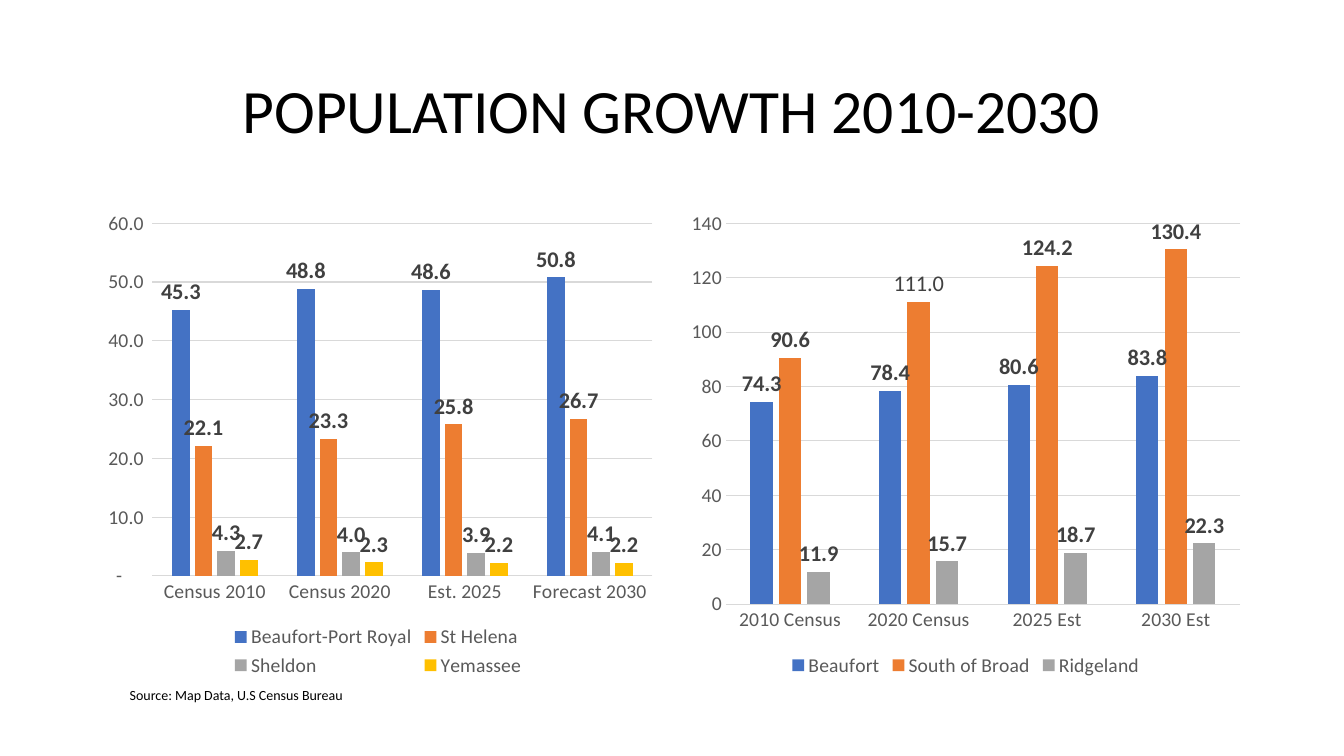
"""Build a slide with two clustered column charts of population growth."""
from pptx import Presentation
from pptx.chart.data import CategoryChartData
from pptx.dml.color import RGBColor
from pptx.enum.chart import XL_CHART_TYPE, XL_LABEL_POSITION, XL_LEGEND_POSITION, XL_TICK_MARK
from pptx.enum.text import MSO_ANCHOR, PP_ALIGN
from pptx.util import Cm, Pt

COLUMNS = XL_CHART_TYPE.COLUMN_CLUSTERED
OUTSIDE_END = XL_LABEL_POSITION.OUTSIDE_END
LEGEND_BOTTOM = XL_LEGEND_POSITION.BOTTOM
NO_TICK = XL_TICK_MARK.NONE
LEFT, CENTER = PP_ALIGN.LEFT, PP_ALIGN.CENTER
TOP, MIDDLE = MSO_ANCHOR.TOP, MSO_ANCHOR.MIDDLE

FONT = "Calibri"
BLACK, DARK_GREY, GREY, LIGHT_GREY = "000000", "404040", "595959", "D9D9D9"
SERIES_COLORS = ["4472C4", "ED7D31", "A5A5A5", "FFC000"]
ACCOUNTING = '_(* #,##0.0_);_(* \\(#,##0.0\\);_(* "-"??_);_(@_)'

TITLE = "POPULATION GROWTH 2010-2030"
SOURCE = "Source: Map Data, U.S Census Bureau"
CHARTS = [
    {
        "categories": ["Census 2010", "Census 2020", "Est. 2025", "Forecast 2030"],
        "series": {
            "Beaufort-Port Royal": [45.3, 48.8, 48.6, 50.8],
            "St Helena": [22.1, 23.3, 25.8, 26.7],
            "Sheldon": [4.3, 4.0, 3.9, 4.1],
            "Yemassee": [2.7, 2.3, 2.2, 2.2],
        },
        "number_format": ACCOUNTING,
        "maximum": 60,
        "step": 10,
        "custom_labels": [],
    },
    {
        "categories": ["2010 Census", "2020 Census", "2025 Est", "2030 Est"],
        "series": {
            "Beaufort": [74.3, 78.4, 80.6, 83.8],
            "South of Broad": [90.6, 111, 124.2, 130.4],
            "Ridgeland": [11.9, 15.7, 18.7, 22.3],
        },
        "number_format": "General",
        "maximum": 140,
        "step": 20,
        "custom_labels": [("South of Broad", 1, "111.0")],
    },
]

MARGIN, CONTENT_WIDTH = 2.33, 29.21
CHART_TOP, CHART_WIDTH, CHART_HEIGHT = 5.08, 14.4, 12.09
CHART_STEP = CONTENT_WIDTH - CHART_WIDTH


def rgb(color):
    return RGBColor.from_string(color)


def set_font(font, size, color, bold=False):
    font.name, font.size, font.bold = FONT, Pt(size), bold
    font.color.rgb = rgb(color)


def add_text(slide, text, left, top, width, height, size, align=LEFT, anchor=TOP, spacing=1.0):
    frame = slide.shapes.add_textbox(Cm(left), Cm(top), Cm(width), Cm(height)).text_frame
    frame.word_wrap = True
    frame.vertical_anchor = anchor
    paragraph = frame.paragraphs[0]
    paragraph.alignment, paragraph.line_spacing = align, spacing
    run = paragraph.add_run()
    run.text = text
    set_font(run.font, size, BLACK)


def set_line(line, color):
    line.color.rgb = rgb(color)
    line.width = Pt(0.75)


def style_axes(chart, content):
    for axis in (chart.category_axis, chart.value_axis):
        axis.major_tick_mark = axis.minor_tick_mark = NO_TICK
        set_font(axis.tick_labels.font, 14, GREY)
    set_line(chart.category_axis.format.line, LIGHT_GREY)
    values = chart.value_axis
    values.format.line.fill.background()
    values.has_major_gridlines = True
    set_line(values.major_gridlines.format.line, LIGHT_GREY)
    values.minimum_scale, values.maximum_scale = 0, content["maximum"]
    values.major_unit = content["step"]
    values.tick_labels.number_format = content["number_format"]
    values.tick_labels.number_format_is_linked = False


def style_series(series, color, number_format):
    series.format.fill.solid()
    series.format.fill.fore_color.rgb = rgb(color)
    series.invert_if_negative = False
    labels = series.data_labels
    labels.show_value = True
    labels.position = OUTSIDE_END
    labels.number_format = number_format
    labels.number_format_is_linked = False
    set_font(labels.font, 16, DARK_GREY, bold=True)


def add_column_chart(slide, content, left):
    data = CategoryChartData(number_format=content["number_format"])
    data.categories = content["categories"]
    for name, values in content["series"].items():
        data.add_series(name, values)
    chart = slide.shapes.add_chart(
        COLUMNS, Cm(left), Cm(CHART_TOP), Cm(CHART_WIDTH), Cm(CHART_HEIGHT), data
    ).chart
    chart.has_title = False
    set_font(chart.font, 10, BLACK)
    chart.has_legend = True
    chart.legend.position = LEGEND_BOTTOM
    chart.legend.include_in_layout = False
    set_font(chart.legend.font, 14, GREY)
    style_axes(chart, content)

    plot = chart.plots[0]
    plot.gap_width, plot.overlap, plot.vary_by_categories = 219, -27, False
    for series, color in zip(plot.series, SERIES_COLORS):
        style_series(series, color, content["number_format"])
    series_by_name = {series.name: series for series in plot.series}
    for name, index, text in content["custom_labels"]:
        label = series_by_name[name].points[index].data_label
        run = label.text_frame.paragraphs[0].add_run()
        run.text = text
        set_font(run.font, 16, DARK_GREY)
        label.position = OUTSIDE_END


def main():
    presentation = Presentation()
    presentation.slide_width, presentation.slide_height = Cm(33.87), Cm(19.05)
    slide = presentation.slides.add_slide(presentation.slide_layouts[6])
    add_text(slide, TITLE, MARGIN, 1.01, CONTENT_WIDTH, 3.68, 44, CENTER, MIDDLE, 0.9)
    for index, content in enumerate(CHARTS):
        add_column_chart(slide, content, MARGIN + index * CHART_STEP)
    add_text(slide, SOURCE, 3.02, CHART_TOP + CHART_HEIGHT, 10.69, 0.68, 10)
    presentation.save("out.pptx")


if __name__ == "__main__":
    main()
